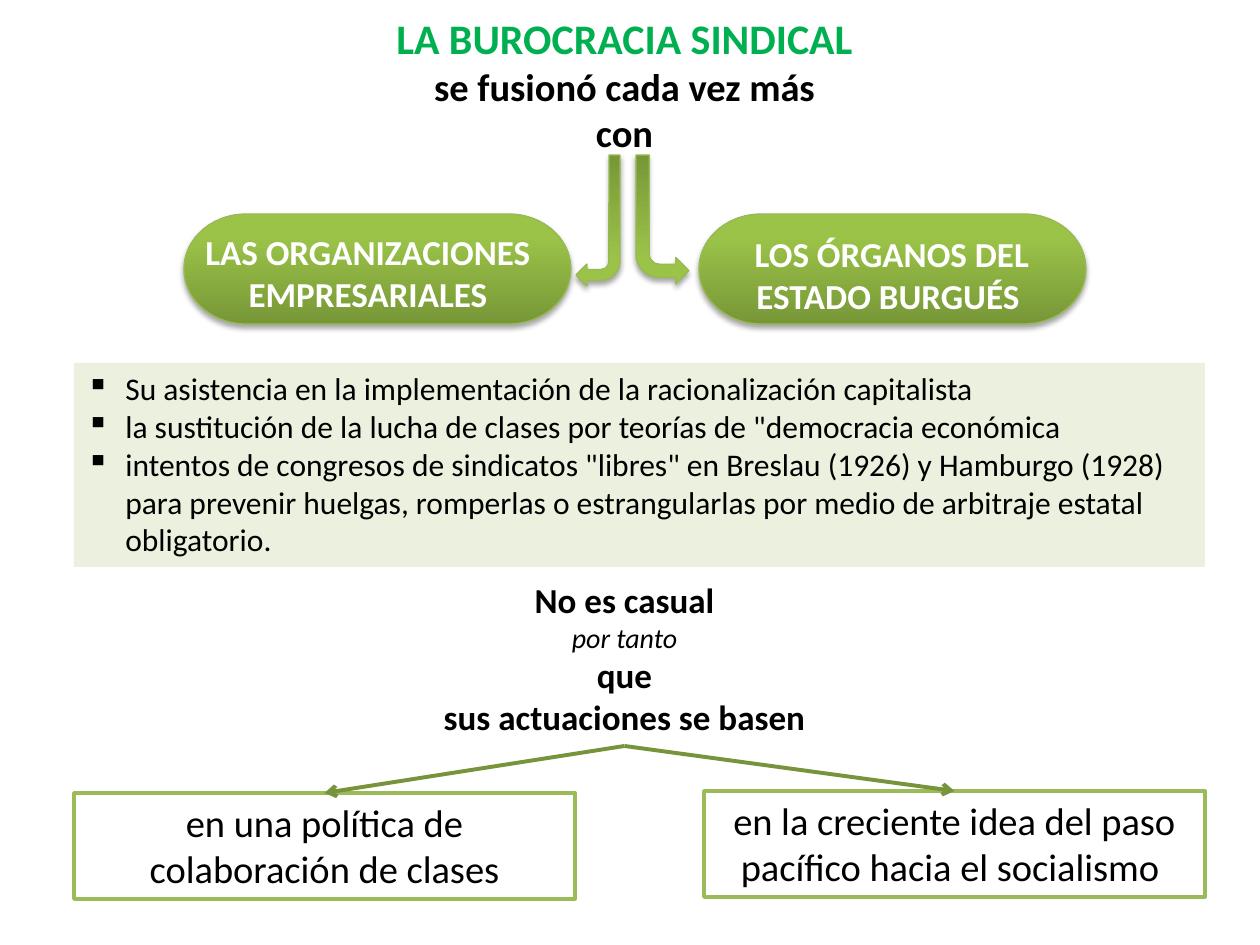
from dataclasses import dataclass

from lxml.etree import SubElement
from pptx import Presentation
from pptx.dml.color import RGBColor
from pptx.enum.shapes import MSO_CONNECTOR as Connector, MSO_SHAPE as Shape
from pptx.enum.text import MSO_ANCHOR as Anchor, MSO_AUTO_SIZE as AutoSize, PP_ALIGN as Align
from pptx.oxml.ns import qn
from pptx.util import Pt


@dataclass(frozen=True)
class Theme:
    font: str = "Calibri"
    title: str = "00B050"
    text: str = "000000"
    inverse: str = "FFFFFF"
    paper: str = "FFFFFF"
    panel: str = "EBF1DE"
    dark: str = "779737"
    light: str = "9BC348"
    edge: str = "98B955"
    frame: str = "9BBB59"
    arrow: str = "77933C"
    heading_size: int = 24
    large: int = 22
    medium: int = 20
    body: int = 18
    small: int = 16


THEME = Theme()
PX = 914400 / 126

# Content: each line is (text, size, colour, bold, italic)
TITLE = [
    ("LA BUROCRACIA SINDICAL", THEME.heading_size, THEME.title, True, False),
    ("se fusionó cada vez más", THEME.large, THEME.text, True, False),
    ("con", THEME.large, THEME.text, True, False),
]
REASON = [
    ("No es casual", THEME.medium, THEME.text, True, False),
    ("por tanto", THEME.small, THEME.text, False, True),
    ("que", THEME.medium, THEME.text, True, False),
    ("sus actuaciones se basen", THEME.medium, THEME.text, True, False),
]
# Partners: text, pill left, label left, label top
PARTNERS = [
    ("LAS ORGANIZACIONES EMPRESARIALES", 184, 165, 224),
    ("LOS ÓRGANOS DEL ESTADO BURGUÉS ", 699, 689, 226),
]
# Bent arrows: left, width, height, mirrored
BENDS = [(576, 44, 131, False), (636, 53, 129, True)]
POINTS = [
    "Su asistencia en la implementación de la racionalización capitalista",
    'la sustitución de la lucha de clases por teorías de "democracia económica',
    'intentos de congresos de sindicatos "libres" en Breslau (1926) y Hamburgo (1928) '
    "para prevenir huelgas, romperlas o estrangularlas por medio de arbitraje estatal "
    "obligatorio.",
]
# Foundations: text, left, top
FOUNDATIONS = [
    ("en una política de colaboración de clases", 74, 793),
    ("en la creciente idea del paso pacífico hacia el socialismo ", 704, 791),
]
LEFT, COLUMN_WIDTH = 74, 1101


def px(*values):
    return [round(value * PX) for value in values]


def color(name):
    return RGBColor.from_string(name)


def write(box, lines, align=Align.CENTER):
    frame = box.text_frame
    frame.word_wrap = True
    frame.auto_size = AutoSize.NONE
    frame.vertical_anchor = Anchor.TOP
    for index, (text, size, ink, bold, italic) in enumerate(lines):
        para = frame.add_paragraph() if index else frame.paragraphs[0]
        para.alignment = align
        span = para.add_run()
        span.text = text
        font = span.font
        font.name, font.size, font.bold, font.italic = THEME.font, Pt(size), bold, italic
        font.color.rgb = color(ink)


def add_text(page, area, lines):
    box = page.shapes.add_textbox(*px(*area))
    write(box, lines)
    return box


def add_rectangle(page, area, fill, line=None):
    box = page.shapes.add_shape(Shape.RECTANGLE, *px(*area))
    box.shadow.inherit = False
    box.fill.solid()
    box.fill.fore_color.rgb = color(fill)
    if line:
        box.line.color.rgb = color(line)
        box.line.width = Pt(2)
    else:
        box.line.fill.background()
    return box


def add_glossy(page, kind, area):
    """Green shape with a vertical gradient and a soft shadow below."""
    shape = page.shapes.add_shape(kind, *px(*area))
    shape.fill.gradient()
    shape.fill.gradient_angle = 90
    for stop, place, tone in zip(shape.fill.gradient_stops, (0, 0.8), (THEME.dark, THEME.light)):
        stop.position = place
        stop.color.rgb = color(tone)
    shape.line.color.rgb = color(THEME.edge)
    shape.line.width = Pt(0.75)
    shape.shadow.inherit = False
    effects = shape.element.spPr.find(qn("a:effectLst"))
    shadow = SubElement(effects, qn("a:outerShdw"), blurRad=str(Pt(3.1)), dist=str(Pt(1.8)),
                        dir="5400000", rotWithShape="0")
    tint = SubElement(shadow, qn("a:srgbClr"), val=THEME.text)
    SubElement(tint, qn("a:alpha"), val="35000")
    return shape


def add_bullets(box, indent):
    for para in box.text_frame.paragraphs:
        props = para._p.get_or_add_pPr()
        props.set("marL", str(indent))
        props.set("indent", str(-indent))
        SubElement(props, qn("a:buChar"), char="▪")


def add_arrow(page, start, end):
    """Arrow from the bottom of one box to the top of another."""
    arrow = page.shapes.add_connector(Connector.STRAIGHT, 0, 0, 0, 0)
    arrow.begin_connect(start, 2)
    arrow.end_connect(end, 0)
    arrow.line.color.rgb = color(THEME.arrow)
    arrow.line.width = Pt(2.25)
    SubElement(arrow.line._get_or_add_ln(), qn("a:tailEnd"), type="arrow")
    SubElement(arrow._element.spPr, qn("a:effectLst"))


def main():
    deck = Presentation()
    deck.slide_width, deck.slide_height = px(1260, 945)
    page = deck.slides.add_slide(deck.slide_layouts[5])

    # Heading
    title = page.shapes.title
    title.left, title.top, title.width, title.height = px(LEFT, 6, COLUMN_WIDTH, 208)
    write(title, TITLE)

    # Two partners of the bureaucracy
    for text, pill_left, label_left, label_top in PARTNERS:
        add_glossy(page, Shape.FLOWCHART_TERMINATOR, (pill_left, 214, 387, 110))
        add_text(page, (label_left, label_top, 406, 97),
                 [(text, THEME.medium, THEME.inverse, True, False)])
    for left, width, height, mirrored in BENDS:
        bend = add_glossy(page, Shape.BENT_ARROW, (left, 155, width, height))
        bend.rotation = 180
        if mirrored:
            bend.element.spPr.xfrm.set("flipH", "1")

    # Bulleted panel
    panel = add_rectangle(page, (LEFT, 363, 1131, 204), THEME.panel)
    write(panel, [(text, THEME.body, THEME.text, False, False) for text in POINTS], Align.LEFT)
    add_bullets(panel, px(39)[0])

    # Conclusion and its two foundations
    reason = add_text(page, (LEFT, 572, COLUMN_WIDTH, 174), REASON)
    for text, left, top in FOUNDATIONS:
        box = add_rectangle(page, (left, top, 501, 106), THEME.paper, THEME.frame)
        write(box, [(text, THEME.large, THEME.text, False, False)])
        add_arrow(page, reason, box)

    deck.save("out.pptx")


if __name__ == "__main__":
    main()
